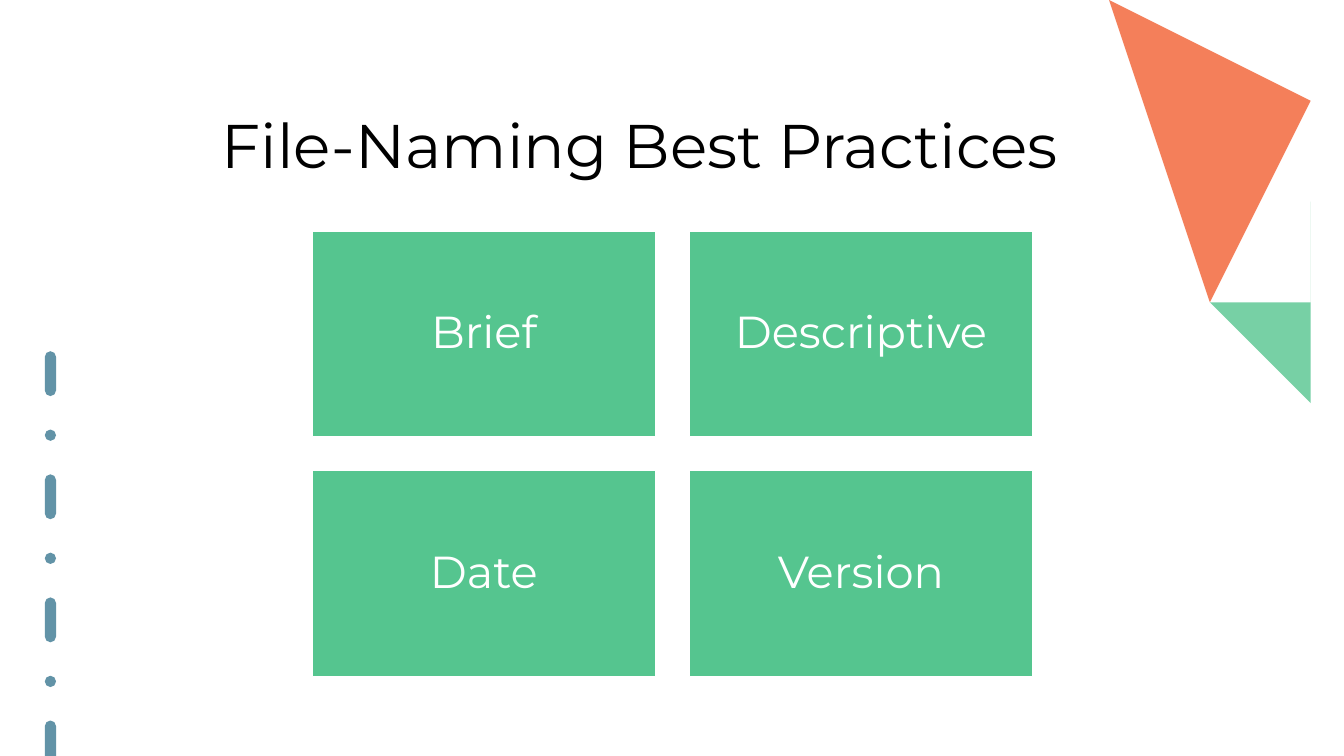
from math import cos, radians, sin

from lxml import etree
from pptx import Presentation
from pptx.dml.color import RGBColor
from pptx.enum.dml import MSO_LINE
from pptx.enum.shapes import MSO_CONNECTOR, MSO_SHAPE
from pptx.enum.text import MSO_ANCHOR, MSO_AUTO_SIZE, PP_ALIGN
from pptx.oxml.ns import qn
from pptx.util import Inches, Pt

STRAIGHT = MSO_CONNECTOR.STRAIGHT
RECTANGLE = MSO_SHAPE.RECTANGLE
DASH_DOT = MSO_LINE.DASH_DOT
MIDDLE, BOTTOM = MSO_ANCHOR.MIDDLE, MSO_ANCHOR.BOTTOM
CENTER = PP_ALIGN.CENTER
NO_AUTOFIT = MSO_AUTO_SIZE.NONE

FONT = "Montserrat"
BLACK = RGBColor(0x00, 0x00, 0x00)
WHITE = RGBColor(0xFF, 0xFF, 0xFF)
GREEN = RGBColor(0x55, 0xC5, 0x8F)
ORANGE = RGBColor(0xF2, 0x60, 0x31)
BLUE = RGBColor(0x3B, 0x78, 0x92)

SLIDE_WIDTH, SLIDE_HEIGHT = 13.33, 7.5
GRID_LEFT, GRID_TOP = 3.1, 2.29
CARD_WIDTH, CARD_HEIGHT, GAP = 3.4, 2.04, 0.34
CARD_INSET = 0.16
PRACTICES = [["Brief", "Descriptive"], ["Date", "Version"]]


def set_opacity(color_parent, percent):
    color = color_parent.find(".//" + qn("a:srgbClr"))
    etree.SubElement(color, qn("a:alpha"), val=str(percent * 1000))


def style_text(text_frame, text, size, color, anchor):
    text_frame.text = text
    text_frame.word_wrap = True
    text_frame.auto_size = NO_AUTOFIT
    text_frame.vertical_anchor = anchor
    paragraph = text_frame.paragraphs[0]
    paragraph.alignment = CENTER
    paragraph.line_spacing = 0.9
    paragraph.font.name = FONT
    paragraph.font.size = Pt(size)
    paragraph.font.color.rgb = color


def add_title(slide, text):
    title = slide.shapes.title
    title.left, title.top = Inches(0.92), Inches(0.4)
    title.width, title.height = Inches(10.86), Inches(1.45)
    style_text(title.text_frame, text, 44, BLACK, BOTTOM)


def add_outline(slide, points, color):
    """Draw a closed, slightly transparent shape through points in inches."""
    builder = slide.shapes.build_freeform(*points[0], scale=Inches(1))
    builder.add_line_segments(points[1:], close=True)
    shape = builder.convert_to_shape()
    shape.shadow.inherit = False
    shape.fill.solid()
    shape.fill.fore_color.rgb = color
    shape.line.fill.background()
    set_opacity(shape.element.spPr, 80)


def edge_circle_points(center_x, center_y, radius_x, radius_y):
    """Return points of an ellipse cut off at the right edge of the slide."""
    angles = [radians(degree) for degree in range(0, 360, 3)]
    return [
        (min(center_x + radius_x * cos(angle), SLIDE_WIDTH),
         center_y + radius_y * sin(angle))
        for angle in angles
    ]


def add_dashed_line(slide, x, top, bottom):
    line = slide.shapes.add_connector(
        STRAIGHT, Inches(x), Inches(top), Inches(x), Inches(bottom))
    line.line.color.rgb = BLUE
    line.line.width = Pt(8)
    line.line.dash_style = DASH_DOT
    properties = line.element.spPr
    properties.find(qn("a:ln")).set("cap", "rnd")
    set_opacity(properties, 80)
    etree.SubElement(properties, qn("a:effectLst"))


def add_card(slide, column, row, text):
    card = slide.shapes.add_shape(
        RECTANGLE,
        Inches(GRID_LEFT + column * (CARD_WIDTH + GAP)),
        Inches(GRID_TOP + row * (CARD_HEIGHT + GAP)),
        Inches(CARD_WIDTH), Inches(CARD_HEIGHT))
    card.shadow.inherit = False
    card.fill.solid()
    card.fill.fore_color.rgb = GREEN
    card.line.color.rgb = WHITE
    card.line.width = Pt(1)
    frame = card.text_frame
    frame.margin_left = frame.margin_right = Inches(CARD_INSET)
    frame.margin_top = frame.margin_bottom = Inches(CARD_INSET)
    style_text(frame, text, 32, WHITE, MIDDLE)


def main():
    presentation = Presentation()
    presentation.slide_width = Inches(SLIDE_WIDTH)
    presentation.slide_height = Inches(SLIDE_HEIGHT)
    slide = presentation.slides.add_slide(presentation.slide_layouts[5])
    slide.background.fill.solid()
    slide.background.fill.fore_color.rgb = WHITE

    triangle = [(11.2, 0.5), (SLIDE_WIDTH, 1.1), (SLIDE_WIDTH, 1.39), (11.82, 2.83)]
    add_outline(slide, triangle, ORANGE)
    add_dashed_line(slide, 0.5, 3.54, SLIDE_HEIGHT)
    add_outline(slide, edge_circle_points(13.19, 3.17, 0.76, 0.73), GREEN)
    add_title(slide, "File-Naming Best Practices")
    for row, labels in enumerate(PRACTICES):
        for column, label in enumerate(labels):
            add_card(slide, column, row, label)

    presentation.save("out.pptx")


if __name__ == "__main__":
    main()
